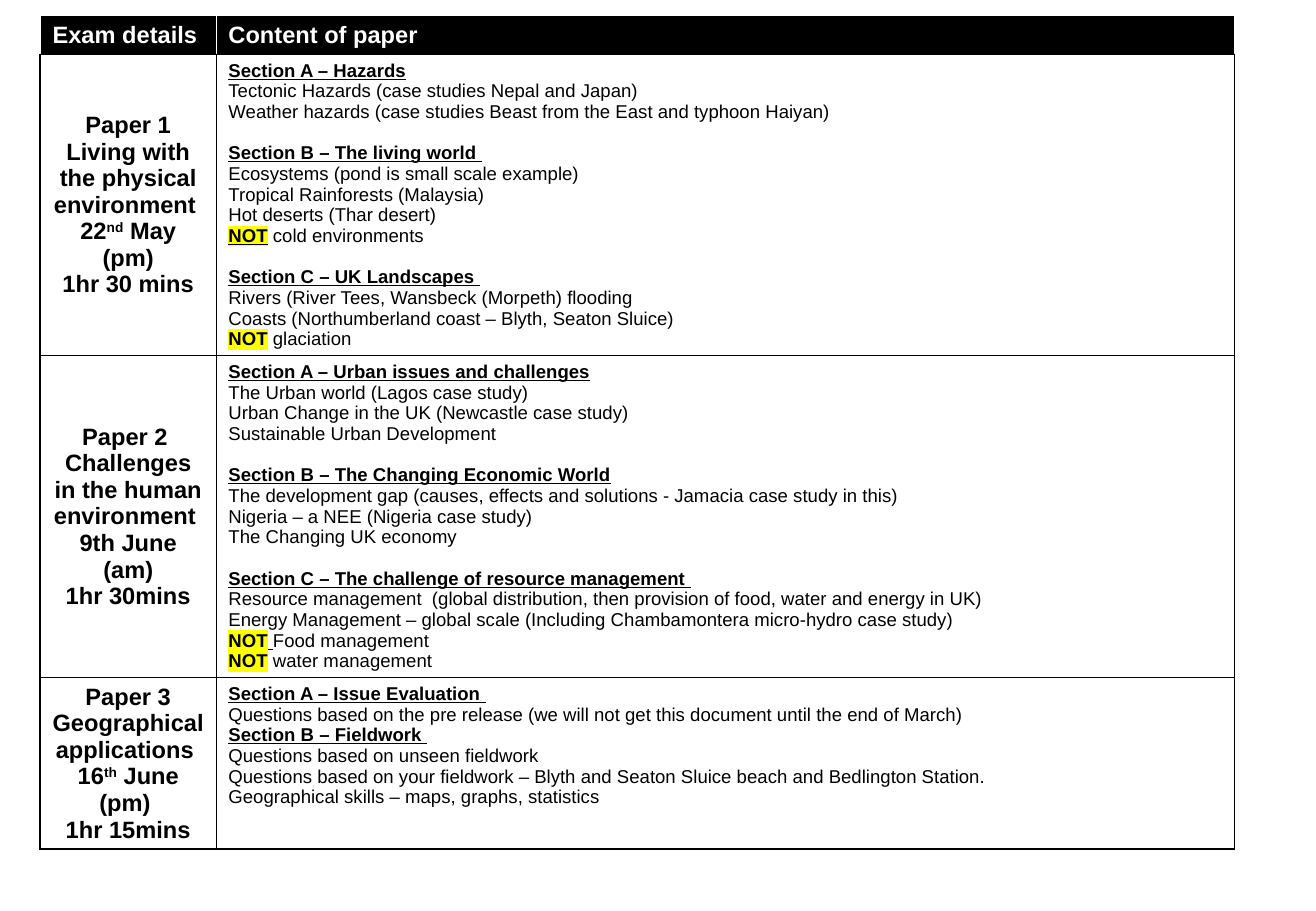
from lxml import etree
from pptx import Presentation
from pptx import util as u
from pptx.dml.color import RGBColor
from pptx.enum import text
from pptx.oxml import ns

BLACK = RGBColor(0, 0, 0)
WHITE = RGBColor(255, 255, 255)
YELLOW = RGBColor(255, 255, 0)

FONT = "Arial"
LABEL_SIZE = 14
BODY_SIZE = 11
SECTION_GAP = 12.25
COLUMN_WIDTHS = (104.4, 603.4)
ROW_HEIGHTS = (22.5, 178.5, 190.8, 101.5)
HEADINGS = ("Exam details ", "Content of paper")

# Run styles: b bold, u underlined, h highlighted, s superscript
NOT = ("NOT", "bh")
# Each paper: label lines, space between sections, sections of heading and lines
PAPERS = [
    (["Paper 1", "Living with the physical environment ",
      [("22", "b"), ("nd", "bs"), (" May (pm)", "b")], "1hr 30 mins"],
     SECTION_GAP,
     [("Section A – Hazards",
       ["Tectonic Hazards (case studies Nepal and Japan)",
        "Weather hazards (case studies Beast from the East and typhoon Haiyan)"]),
      ("Section B – The living world ",
       ["Ecosystems (pond is small scale example)",
        "Tropical Rainforests (Malaysia)",
        "Hot deserts (Thar desert)",
        [("NOT", "buh"), (" cold environments", "")]]),
      ("Section C – UK Landscapes ",
       ["Rivers (River Tees, Wansbeck (Morpeth) flooding",
        "Coasts (Northumberland coast – Blyth, Seaton Sluice)",
        [NOT, (" glaciation", "")]])]),
    (["Paper 2 ", "Challenges in the human environment ", "9th June (am)", "1hr 30mins"],
     SECTION_GAP,
     [("Section A – Urban issues and challenges",
       ["The Urban world (Lagos case study)",
        "Urban Change in the UK (Newcastle case study)",
        "Sustainable Urban Development"]),
      ("Section B – The Changing Economic World",
       ["The development gap (causes, effects and solutions - Jamacia case study in this)",
        "Nigeria – a NEE (Nigeria case study)",
        "The Changing UK economy"]),
      ("Section C – The challenge of resource management ",
       ["Resource management  (global distribution, then provision of food, "
        "water and energy in UK)",
        "Energy Management – global scale (Including Chambamontera micro-hydro case study)",
        [NOT, (" ", "bu"), ("Food management", "")],
        [NOT, (" water management", "")]])]),
    (["Paper 3", "Geographical applications ",
      [("16", "b"), ("th", "bs"), (" June (pm) ", "b")], "1hr 15mins"],
     0,
     [("Section A – Issue Evaluation ",
       ["Questions based on the pre release (we will not get this document "
        "until the end of March)"]),
      ("Section B – Fieldwork ",
       ["Questions based on unseen fieldwork",
        "Questions based on your fieldwork – Blyth and Seaton Sluice beach "
        "and Bedlington Station.",
        "Geographical skills – maps, graphs, statistics"])]),
]


def add_line(cell, line, style="", size=BODY_SIZE, color=BLACK, centred=False, gap=0):
    """Add one paragraph; line is a string in the given style or a list of styled runs."""
    frame = cell.text_frame
    paragraph = frame.paragraphs[0]
    if paragraph.runs:
        paragraph = frame.add_paragraph()
        paragraph.space_before = u.Pt(gap)
    paragraph.alignment = text.PP_ALIGN.CENTER if centred else text.PP_ALIGN.LEFT
    for words, marks in [(line, style)] if isinstance(line, str) else line:
        run = paragraph.add_run()
        run.text = words
        font = run.font
        font.name, font.size = FONT, u.Pt(size)
        font.bold, font.underline = "b" in marks, "u" in marks
        font.color.rgb = color
        properties = run._r.get_or_add_rPr()
        if "s" in marks:
            properties.set("baseline", "30000")
        if "h" in marks:
            highlight = etree.Element(ns.qn("a:highlight"))
            etree.SubElement(highlight, ns.qn("a:srgbClr"), val=str(YELLOW))
            properties.find(ns.qn("a:solidFill")).addnext(highlight)


def paint_cell(cell, fill, edge):
    """Fill the cell and draw its borders; the bottom border is always black."""
    cell.fill.solid()
    cell.fill.fore_color.rgb = fill
    properties = cell._tc.get_or_add_tcPr()
    for index, (side, color) in enumerate(zip("LRTB", (edge, edge, edge, BLACK))):
        border = etree.Element(ns.qn(f"a:ln{side}"), w=str(u.Pt(1)))
        solid = etree.SubElement(border, ns.qn("a:solidFill"))
        etree.SubElement(solid, ns.qn("a:srgbClr"), val=str(color))
        properties.insert(index, border)


def fill_header(cells):
    for cell, heading, centred in zip(cells, HEADINGS, (True, False)):
        paint_cell(cell, BLACK, WHITE)
        add_line(cell, heading, "b", LABEL_SIZE, WHITE, centred)


def fill_paper(cells, label, gap, sections):
    details, content = cells
    for cell in cells:
        paint_cell(cell, WHITE, BLACK)
    details.vertical_anchor = text.MSO_ANCHOR.MIDDLE
    for line in label:
        add_line(details, line, "b", LABEL_SIZE, centred=True)
    for heading, lines in sections:
        add_line(content, heading, "bu", gap=gap)
        for line in lines:
            add_line(content, line)


def add_exam_table(slide, left, top):
    table = slide.shapes.add_table(
        len(ROW_HEIGHTS), len(COLUMN_WIDTHS), u.Pt(left), u.Pt(top),
        u.Pt(sum(COLUMN_WIDTHS)), u.Pt(sum(ROW_HEIGHTS))).table
    table.horz_banding = False
    for column, width in zip(table.columns, COLUMN_WIDTHS):
        column.width = u.Pt(width)
    for row, height in zip(table.rows, ROW_HEIGHTS):
        row.height = u.Pt(height)
    header, *papers = [list(row.cells) for row in table.rows]
    fill_header(header)
    for cells, paper in zip(papers, PAPERS):
        fill_paper(cells, *paper)


def main():
    deck = Presentation()
    deck.slide_width, deck.slide_height = u.Pt(780), u.Pt(540)
    slide = deck.slides.add_slide(deck.slide_layouts[6])
    add_exam_table(slide, 23.8, 9.2)
    deck.save("out.pptx")


if __name__ == "__main__":
    main()
